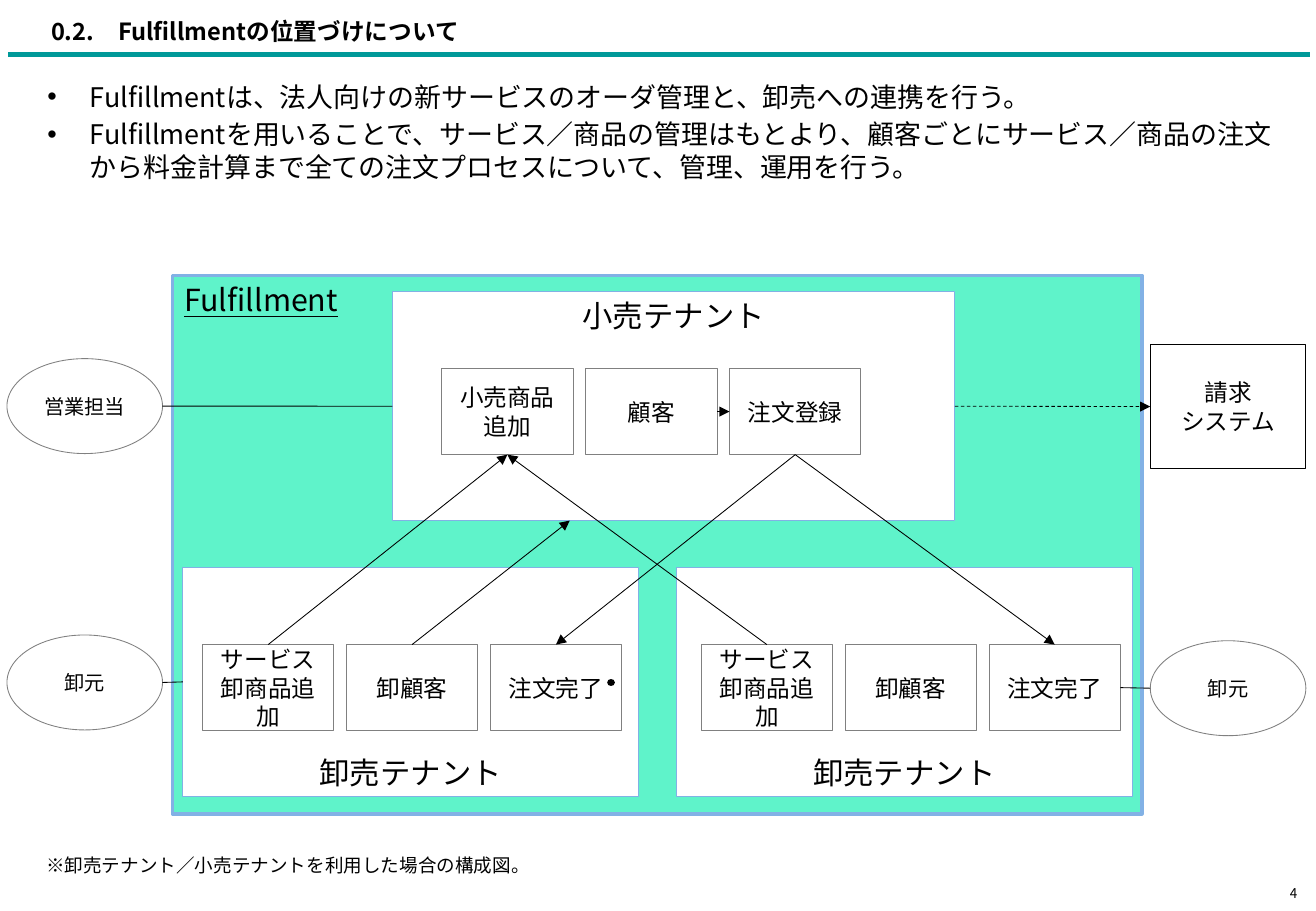
"""Build the slide that places Fulfillment between retail and wholesale tenants."""
from dataclasses import dataclass
from typing import Optional

from lxml.etree import SubElement
from pptx import Presentation
from pptx.dml.color import RGBColor
from pptx.enum.dml import MSO_LINE
from pptx.enum.shapes import MSO_CONNECTOR, MSO_SHAPE
from pptx.enum.text import MSO_ANCHOR, MSO_AUTO_SIZE, PP_ALIGN
from pptx.oxml.ns import qn
from pptx.util import Pt


@dataclass(frozen=True)
class Theme:
    font: str = "Noto Sans CJK JP"
    black: str = "000000"
    white: str = "FFFFFF"
    grey: str = "808080"
    blue: str = "82B1E5"
    mint: str = "5FF3CA"
    teal: str = "009999"
    heading: float = 18
    bullet: float = 16
    label: float = 14
    actor: float = 12
    note: float = 11
    page: float = 8


T = Theme()


@dataclass(frozen=True)
class Box:
    x: float
    y: float
    w: float
    h: float
    text: str
    size: float = T.label
    line: str = T.grey
    weight: float = 0.5
    fill: str = T.white
    kind: MSO_SHAPE = MSO_SHAPE.RECTANGLE
    anchor: MSO_ANCHOR = MSO_ANCHOR.MIDDLE
    align: PP_ALIGN = PP_ALIGN.CENTER
    inset: float = 7.2
    underline: bool = False

    def at(self, fx: float, fy: float) -> tuple[float, float]:
        return self.x + self.w * fx, self.y + self.h * fy

    @property
    def top(self) -> tuple[float, float]:
        return self.at(0.5, 0)

    @property
    def bottom(self) -> tuple[float, float]:
        return self.at(0.5, 1)

    @property
    def left(self) -> tuple[float, float]:
        return self.at(0, 0.5)

    @property
    def right(self) -> tuple[float, float]:
        return self.at(1, 0.5)


@dataclass(frozen=True)
class Link:
    start: tuple[float, float]
    end: tuple[float, float]
    arrow: bool = True
    color: str = T.black
    weight: float = 0.5
    dash: Optional[MSO_LINE] = None
    round_cap: bool = False


def write(tf, text: str, size: float, align: PP_ALIGN = PP_ALIGN.LEFT,
          bold: bool = False, underline: bool = False) -> None:
    tf.text = text
    tf.word_wrap = True
    tf.auto_size = MSO_AUTO_SIZE.NONE
    for p in tf.paragraphs:
        p.alignment = align
        for r in p.runs:
            f = r.font
            f.name, f.size, f.bold, f.underline = T.font, Pt(size), bold, underline
            f.color.rgb = RGBColor.from_string(T.black)
            SubElement(f._element, qn("a:ea")).set("typeface", T.font)


def place(sp, x: float, y: float, w: float, h: float) -> None:
    sp.left, sp.top, sp.width, sp.height = Pt(x), Pt(y), Pt(w), Pt(h)


def draw_box(shapes, box: Box) -> None:
    sp = shapes.add_shape(box.kind, Pt(box.x), Pt(box.y), Pt(box.w), Pt(box.h))
    sp.shadow.inherit = False
    sp.fill.solid()
    sp.fill.fore_color.rgb = RGBColor.from_string(box.fill)
    sp.line.color.rgb = RGBColor.from_string(box.line)
    sp.line.width = Pt(box.weight)
    tf = sp.text_frame
    write(tf, box.text, box.size, box.align, underline=box.underline)
    tf.vertical_anchor = box.anchor
    tf.margin_left = tf.margin_right = Pt(box.inset)


def draw_link(shapes, link: Link) -> None:
    cx = shapes.add_connector(MSO_CONNECTOR.STRAIGHT,
                              *(Pt(v) for v in link.start + link.end))
    cx.line.color.rgb = RGBColor.from_string(link.color)
    cx.line.width = Pt(link.weight)
    if link.dash:
        cx.line.dash_style = link.dash
    ln = cx.line._get_or_add_ln()
    if link.round_cap:
        ln.set("cap", "rnd")
    if link.arrow:
        SubElement(ln, qn("a:tailEnd")).set("type", "triangle")
    SubElement(cx._element.spPr, qn("a:effectLst"))


def draw_text(shapes, x: float, y: float, w: float, h: float, text: str,
              size: float, align: PP_ALIGN, inset: float) -> None:
    tb = shapes.add_textbox(Pt(x), Pt(y), Pt(w), Pt(h))
    tf = tb.text_frame
    write(tf, text, size, align)
    tf.vertical_anchor = MSO_ANCHOR.MIDDLE
    tf.margin_left = tf.margin_right = Pt(inset)
    tf.margin_top = tf.margin_bottom = Pt(2.88)


def steps(x: float, y: float, *labels: str) -> list[Box]:
    return [Box(x + i * 85.3, y, 77.9, 51, label) for i, label in enumerate(labels)]


def tenant(x: float, y: float, w: float, text: str, anchor: MSO_ANCHOR) -> Box:
    return Box(x, y, w, 136, text, T.heading, T.blue, anchor=anchor)


def actor(x: float, y: float, text: str) -> Box:
    return Box(x, y, 92.2, 56.3, text, T.actor, kind=MSO_SHAPE.OVAL, inset=0)


def fill_placeholders(s) -> None:
    title, body = s.shapes.title, s.placeholders[1]
    place(title, 24.5, 5, 730.8, 26.6)
    tf = title.text_frame
    write(tf, "0.2.　Fulfillmentの位置づけについて", T.label, bold=True)
    tf.vertical_anchor = MSO_ANCHOR.MIDDLE
    tf.margin_left = Pt(5.76)
    tf.margin_right = tf.margin_top = tf.margin_bottom = Pt(2.88)

    place(body, 20.9, 43.9, 740.9, 79.9)
    write(body.text_frame,
          "Fulfillmentは、法人向けの新サービスのオーダ管理と、卸売への連携を行う。\n"
          "Fulfillmentを用いることで、サービス／商品の管理はもとより、顧客ごとにサービス／商品の"
          "注文から料金計算まで全ての注文プロセスについて、管理、運用を行う。", T.bullet)
    for p in body.text_frame.paragraphs:
        pPr = p._p.get_or_add_pPr()
        pPr.set("marL", str(Pt(25.2)))
        pPr.set("indent", str(-Pt(25.2)))


def draw_diagram(shapes) -> None:
    system = Box(102.2, 163.4, 574.6, 319, "Fulfillment", T.heading, T.blue, 2.25, T.mint,
                 anchor=MSO_ANCHOR.TOP, align=PP_ALIGN.LEFT, underline=True)
    retail = tenant(232.6, 172.8, 333.4, "小売テナント", MSO_ANCHOR.TOP)
    wholesale = [tenant(x, 336.2, 270, "卸売テナント", MSO_ANCHOR.BOTTOM) for x in (108.4, 401)]
    product, customer, order = steps(261.8, 218.5, "小売商品追加", "顧客", "注文登録")
    rows = [steps(x, 382.1, "サービス卸商品追加", "卸顧客", "注文完了") for x in (120, 415.6)]
    (add_a, customer_a, done_a), (add_b, _, done_b) = rows
    sales = actor(4.1, 212.6, "営業担当")
    supplier_a, supplier_b = actor(4.1, 376.4, "卸元"), actor(681.8, 379.8, "卸元")
    billing = Box(681.8, 204.1, 92.2, 73.8, "請求\nシステム", line=T.black)

    for box in (system, retail, *wholesale, product, customer, order, *rows[0], *rows[1],
                sales, supplier_a, supplier_b, billing):
        draw_box(shapes, box)
    for link in (
        Link(sales.right, retail.left, arrow=False),
        Link(supplier_a.right, wholesale[0].left, arrow=False),
        Link(done_b.right, supplier_b.left, arrow=False),
        Link(retail.right, billing.left, dash=MSO_LINE.DASH),
        Link(customer.right, order.left),
        Link(add_a.top, product.bottom),
        Link(add_b.top, product.bottom),
        Link(customer_a.top, (337.7, 308.6)),
        Link(order.bottom, done_a.top),
        Link(order.bottom, done_b.top),
        Link((362.2, 404.6), (357.8, 404.6), False, weight=4.5,
             dash=MSO_LINE.ROUND_DOT, round_cap=True),
    ):
        draw_link(shapes, link)


def main() -> None:
    prs = Presentation()
    prs.slide_width, prs.slide_height = Pt(780), Pt(540)
    s = prs.slides.add_slide(prs.slide_layouts[1])
    fill_placeholders(s)
    draw_link(s.shapes, Link((5, 32.4), (776.2, 32.4), False, T.teal, 3))
    draw_diagram(s.shapes)
    draw_text(s.shapes, 24.5, 503.3, 479.5, 18.7,
              "※卸売テナント／小売テナントを利用した場合の構成図。", T.note, PP_ALIGN.LEFT, 2.88)
    draw_text(s.shapes, 749.5, 522, 26.6, 14.4, "4", T.page, PP_ALIGN.RIGHT, 7.2)
    prs.save("out.pptx")


if __name__ == "__main__":
    main()
